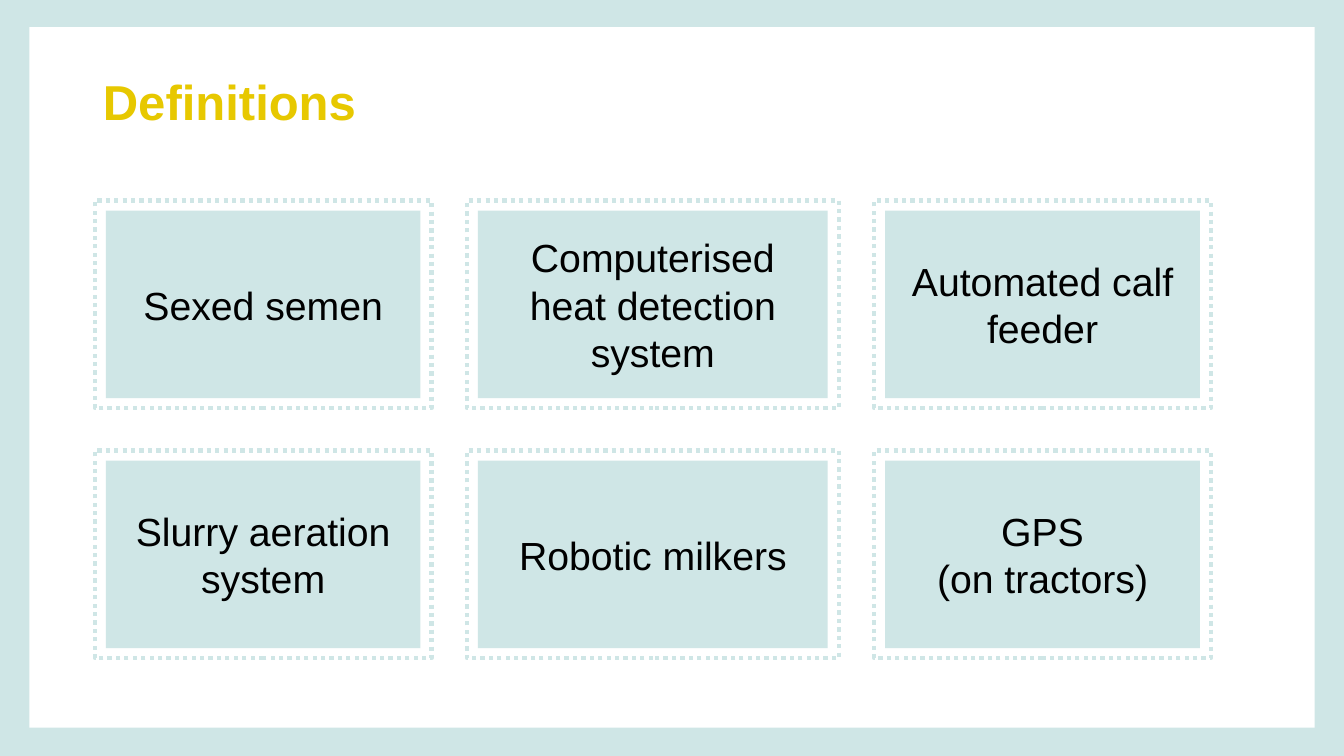
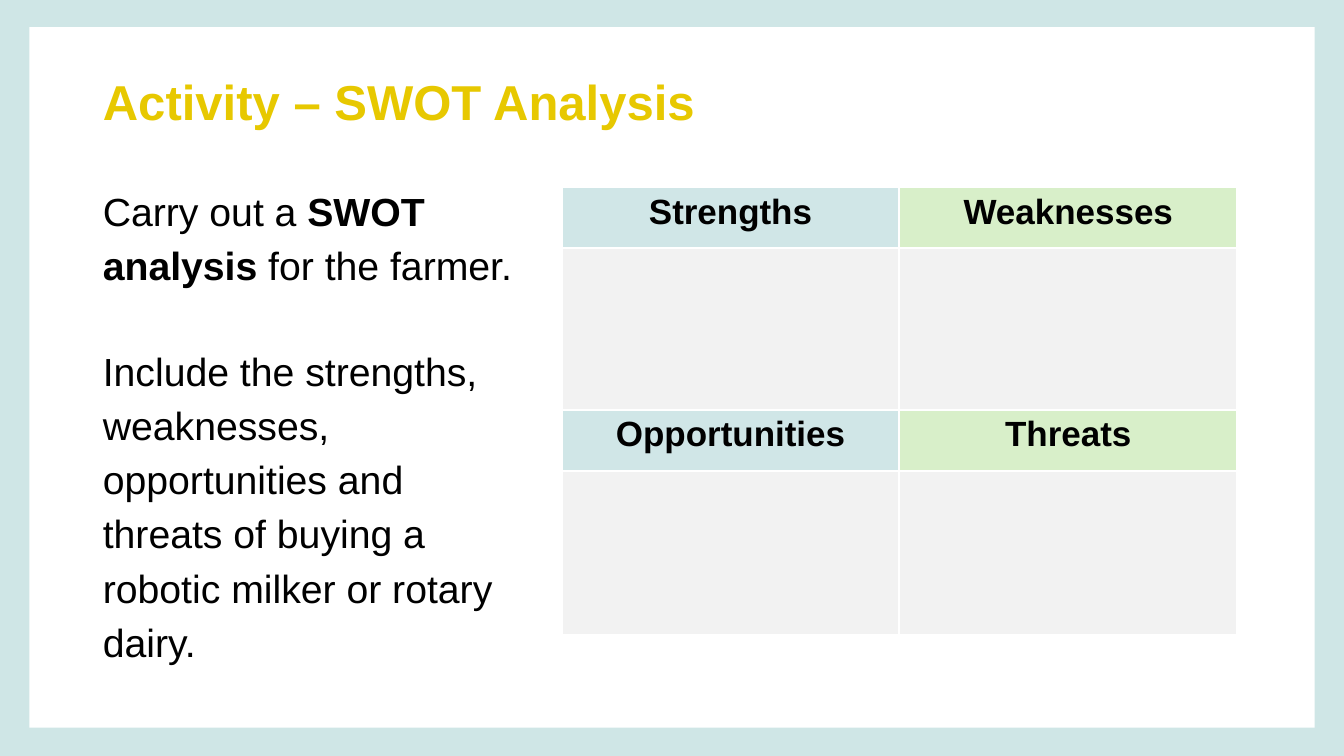
import pptx
import pptx.util
import pptx.dml.color
import pptx.enum.dml
import pptx.enum.shapes
import pptx.enum.text
import pptx.oxml
import pptx.oxml.ns
from pptx.util import Inches, Pt

# Content
DEFINITIONS = [
    ["Sexed semen", "Computerised heat detection system", "Automated calf feeder"],
    ["Slurry aeration system", "Robotic milkers", "GPS\n(on tractors)"],
]
# Each paragraph is a list of (text, bold) pieces
TASK = [
    [("Carry out a ", False), ("SWOT analysis", True), (" for the farmer.", False)],
    [("Include the strengths, weaknesses, opportunities and threats of buying "
      "a robotic milker or rotary dairy.", False)],
]
SWOT = [["Strengths", "Weaknesses"], ["", ""], ["Opportunities", "Threats"], ["", ""]]

# Shared style and grid, in inches
COLOURS = {"mint": "CFE6E6", "white": "FFFFFF", "gold": "E7C800", "black": "000000",
           "left_head": "D0E6E7", "right_head": "D8EFC9", "blank": "F2F2F2"}
FONT = "Arial"
WIDTH, HEIGHT = 13.33, 7.5
CARD_LEFT, CARD_TOP, CARD_HEIGHT = 1.05, 2.09, 1.86
CARD_WIDTHS = [3.12, 3.47, 3.12]
COLUMN_GAP, ROW_GAP, OUTLINE_GAP = 0.57, 0.62, 0.11
TABLE_BOX = (5.57, 1.86, 6.7, 4.44)
ROW_HEIGHTS = [0.6, 1.61, 0.6, 1.63]
ALIGN = pptx.enum.text.PP_ALIGN
ANCHOR = pptx.enum.text.MSO_ANCHOR


def rgb(name):
    return pptx.dml.color.RGBColor.from_string(COLOURS[name])


def style_run(run, size, colour="black", bold=False):
    run.font.name, run.font.size, run.font.bold = FONT, Pt(size), bold
    run.font.color.rgb = rgb(colour)


def place(shape, left, top, width, height):
    shape.left, shape.top = Inches(left), Inches(top)
    shape.width, shape.height = Inches(width), Inches(height)


def add_box(slide, left, top, width, height, fill=None, outline=None):
    box = slide.shapes.add_shape(pptx.enum.shapes.MSO_SHAPE.RECTANGLE,
                                 *map(Inches, (left, top, width, height)))
    box.shadow.inherit = False
    if fill:
        box.fill.solid()
        box.fill.fore_color.rgb = rgb(fill)
    else:
        box.fill.background()
    if outline:
        box.line.color.rgb = rgb(outline)
        box.line.width = Pt(3)
        box.line.dash_style = pptx.enum.dml.MSO_LINE.ROUND_DOT
    else:
        box.line.fill.background()
    return box


def add_slide(prs, layout, heading):
    slide = prs.slides.add_slide(prs.slide_layouts[layout])
    title = slide.shapes.title
    place(title, 0.92, 0.7, 11.5, 0.67)
    frame = title.text_frame
    frame.text = heading
    frame.auto_size = pptx.enum.text.MSO_AUTO_SIZE.NONE
    frame.vertical_anchor = ANCHOR.MIDDLE
    frame.paragraphs[0].alignment = ALIGN.LEFT
    frame.paragraphs[0].line_spacing = 0.9
    style_run(frame.paragraphs[0].runs[0], 35, "gold", True)
    return slide


def add_frame(prs, slide):
    """Put the mint border on the master, behind everything."""
    border = add_box(slide, 0, 0, WIDTH, HEIGHT, "mint")
    page = add_box(slide, 0.29, 0.27, 12.75, 6.95, "white")
    tree = prs.slide_master.shapes._spTree
    for position, panel in enumerate((border, page), start=2):
        tree.insert(position, panel._element)


def add_cards(slide):
    for row, terms in enumerate(DEFINITIONS):
        left = CARD_LEFT
        top = CARD_TOP + row * (CARD_HEIGHT + ROW_GAP)
        for term, width in zip(terms, CARD_WIDTHS):
            card = add_box(slide, left, top, width, CARD_HEIGHT, "mint")
            frame = card.text_frame
            frame.word_wrap = True
            frame.vertical_anchor = ANCHOR.MIDDLE
            frame.text = term
            for paragraph in frame.paragraphs:
                paragraph.alignment = ALIGN.CENTER
                style_run(paragraph.runs[0], 28)
            add_box(slide, left - OUTLINE_GAP, top - OUTLINE_GAP + 0.01,
                    width + 2 * OUTLINE_GAP, CARD_HEIGHT + 0.2, outline="mint")
            left += width + COLUMN_GAP


def add_task(slide):
    task = slide.placeholders[1]
    place(task, 0.92, 1.74, 4.35, 4.76)
    frame = task.text_frame
    frame.auto_size = pptx.enum.text.MSO_AUTO_SIZE.NONE
    for index, pieces in enumerate(TASK):
        paragraph = frame.add_paragraph() if index else frame.paragraphs[0]
        properties = paragraph._p.get_or_add_pPr()
        properties.set("marL", "0")
        properties.set("indent", "0")
        pptx.oxml.ns.qn("a:buNone")
        properties.append(pptx.oxml.parse_xml(
            f'<a:buNone {pptx.oxml.ns.nsdecls("a")}/>'))
        paragraph.line_spacing = 1.15
        paragraph.space_before = Pt(37 if index else 0)
        for text, bold in pieces:
            run = paragraph.add_run()
            run.text = text
            style_run(run, 28, bold=bold)


def border_cell(cell):
    properties = cell._tc.get_or_add_tcPr()
    for position, side in enumerate("LRTB"):
        properties.insert(position, pptx.oxml.parse_xml(
            f'<a:ln{side} {pptx.oxml.ns.nsdecls("a")} w="{Pt(1.5)}"><a:solidFill>'
            f'<a:srgbClr val="{COLOURS["white"]}"/></a:solidFill></a:ln{side}>'))


def add_swot(slide):
    table = slide.shapes.add_table(len(SWOT), len(SWOT[0]),
                                   *map(Inches, TABLE_BOX)).table
    table.first_row = table.horz_banding = False
    for column in table.columns:
        column.width = Inches(TABLE_BOX[2] / len(SWOT[0]))
    for row, (labels, height) in enumerate(zip(SWOT, ROW_HEIGHTS)):
        table.rows[row].height = Inches(height)
        for column, label in enumerate(labels):
            cell = table.cell(row, column)
            cell.fill.solid()
            heading_fill = ("left_head", "right_head")[column]
            cell.fill.fore_color.rgb = rgb(heading_fill if label else "blank")
            border_cell(cell)
            if label:
                cell.text_frame.text = label
                paragraph = cell.text_frame.paragraphs[0]
                paragraph.alignment = ALIGN.CENTER
                style_run(paragraph.runs[0], 25, bold=True)


def main():
    prs = pptx.Presentation()
    prs.slide_width, prs.slide_height = Inches(WIDTH), Inches(HEIGHT)
    definitions = add_slide(prs, 5, "Definitions")
    add_frame(prs, definitions)
    add_cards(definitions)
    activity = add_slide(prs, 1, "Activity – SWOT Analysis")
    add_task(activity)
    add_swot(activity)
    prs.save("out.pptx")


if __name__ == "__main__":
    main()
